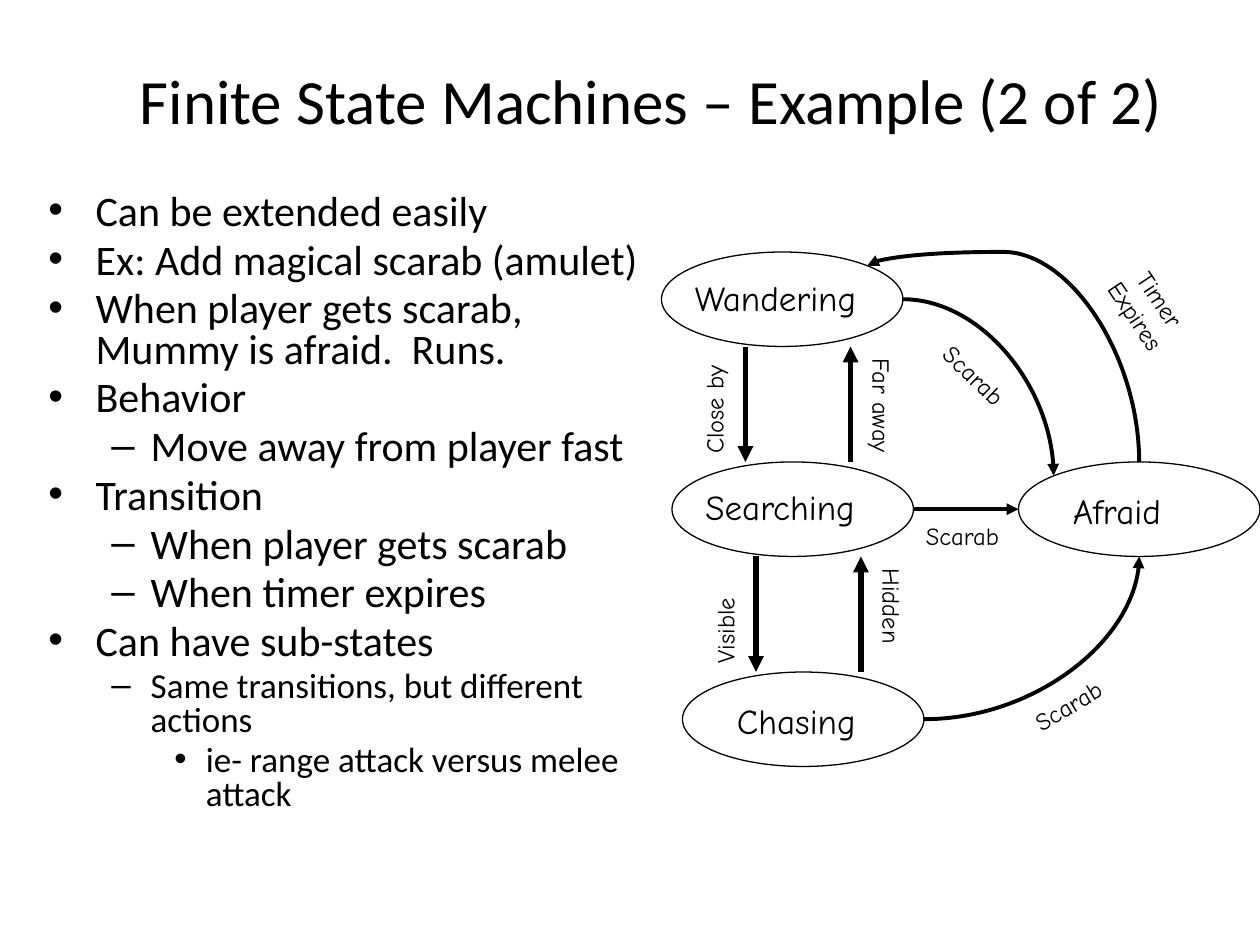
import pptx
import pptx.util
import pptx.dml.color
import pptx.enum.shapes
import pptx.enum.text
import pptx.oxml
import pptx.oxml.ns

BLACK = "000000"
CELL = pptx.util.Inches(1 / 12)  # grid: 120 columns by 90 rows


def style_text(paragraph, wording, size, font, color=BLACK):
    run = paragraph.add_run()
    run.text = wording
    run.font.size = pptx.util.Pt(size)
    run.font.name = font
    run.font.color.rgb = pptx.dml.color.RGBColor.from_string(color)


def add_label(shapes, box, lines, size, turn=0, align=None):
    label = shapes.add_textbox(*(int(CELL * n) for n in box))
    label.rotation = turn
    label.text_frame.word_wrap = False
    label.text_frame.auto_size = pptx.enum.text.MSO_AUTO_SIZE.SHAPE_TO_FIT_TEXT
    for i, line in enumerate(lines):
        paragraph = label.text_frame.paragraphs[0] if i == 0 else label.text_frame.add_paragraph()
        paragraph.alignment = align
        style_text(paragraph, line, size, "Comic Neue")


deck = pptx.Presentation()
deck.slide_width, deck.slide_height = 120 * CELL, 90 * CELL
slide = deck.slides.add_slide(deck.slide_layouts[1])
CENTER = pptx.enum.text.PP_ALIGN.CENTER

# Title
title = slide.shapes.title
title.left, title.top, title.width, title.height = (int(CELL * n) for n in (9, 2, 106, 15))
title.text_frame.vertical_anchor = pptx.enum.text.MSO_ANCHOR.MIDDLE
title.text_frame.paragraphs[0].alignment = CENTER
style_text(title.text_frame.paragraphs[0], "Finite State Machines – Example (2 of 2)", 36, "Calibri")

# Bullet list: level, size, wording
points = [
    (0, 24, "Can be extended easily"),
    (0, 24, "Ex: Add magical scarab (amulet)"),
    (0, 24, "When player gets scarab, Mummy is afraid.  Runs."),
    (0, 24, "Behavior"),
    (1, 24, "Move away from player fast"),
    (0, 24, "Transition"),
    (1, 24, "When player gets scarab"),
    (1, 24, "When timer expires"),
    (0, 24, "Can have sub-states"),
    (1, 20, "Same transitions, but different actions"),
    (2, 20, "ie- range attack versus melee attack"),
]
body = slide.placeholders[1]
body.left, body.top, body.width, body.height = (int(CELL * n) for n in (3.4, 17.9, 60, 66))
body.text_frame.auto_size = pptx.enum.text.MSO_AUTO_SIZE.NONE
for i, (level, size, wording) in enumerate(points):
    paragraph = body.text_frame.paragraphs[0] if i == 0 else body.text_frame.add_paragraph()
    paragraph.level = level
    paragraph.line_spacing = 0.8
    style_text(paragraph, wording, size, "Calibri")

# States: column and row of the ellipse, name, box of the name
states = [
    (63, 24, "Wandering", (65, 25.7, 19.2, 5.2)),
    (64, 44, "Searching", (66, 45.6, 18, 5.2)),
    (65, 64, "Chasing", (69, 66, 14.2, 5.2)),
    (97, 44, "Afraid", (101, 46, 12.7, 5.2)),
]
for column, row, name, name_box in states:
    state = slide.shapes.add_group_shape()
    oval = state.shapes.add_shape(
        pptx.enum.shapes.MSO_SHAPE.OVAL, column * CELL, row * CELL, 23 * CELL, 9 * CELL)
    oval.shadow.inherit = False
    oval.fill.background()
    oval.line.color.rgb = pptx.dml.color.RGBColor.from_string(BLACK)
    oval.line.width = pptx.util.Pt(0.75)
    add_label(state.shapes, name_box, [name], 20)

# Transitions: start, end, width, preset curve (None when straight)
transitions = [
    ((71, 33), (71, 44), 3, None),
    ((72, 53), (72, 64), 3, None),
    ((81, 44), (81, 33), 3, None),
    ((82, 64), (82, 53), 3, None),
    ((87, 48.5), (97, 48.5), 2.25, None),
    ((86, 28.5), (100.35, 45.3), 2.25, "curvedConnector2"),
    ((88, 68.5), (108.5, 53), 2.25, "curvedConnector2"),
    ((86.2, 21.7), (104.9, 47.6), 2.25, "curvedConnector3"),  # turned below
]
for start, end, width, curve in transitions:
    kind = pptx.enum.shapes.MSO_CONNECTOR.CURVE if curve else pptx.enum.shapes.MSO_CONNECTOR.STRAIGHT
    arrow = slide.shapes.add_connector(kind, *(int(CELL * n) for n in start + end))
    arrow.line.color.rgb = pptx.dml.color.RGBColor.from_string(BLACK)
    arrow.line.width = pptx.util.Pt(width)
    properties = arrow._element.spPr
    tip = pptx.oxml.parse_xml('<a:tailEnd %s type="triangle"/>' % pptx.oxml.ns.nsdecls("a"))
    properties.find(pptx.oxml.ns.qn("a:ln")).append(tip)
    properties.append(pptx.oxml.parse_xml("<a:effectLst %s/>" % pptx.oxml.ns.nsdecls("a")))
    if curve:
        properties.find(pptx.oxml.ns.qn("a:prstGeom")).set("prst", curve)

# The timer curve leaves Afraid upwards and bends past the top of Wandering
frame = properties.find(pptx.oxml.ns.qn("a:xfrm"))
frame.set("rot", "5400000")
frame.set("flipH", "1")
arrow_shape = properties.find(pptx.oxml.ns.qn("a:prstGeom"))
for old in list(arrow_shape):
    arrow_shape.remove(old)
arrow_shape.append(pptx.oxml.parse_xml(
    '<a:avLst %s><a:gd name="adj1" fmla="val 107000"/></a:avLst>' % pptx.oxml.ns.nsdecls("a")))

# Transition labels: box, lines, turn, alignment
captions = [
    ((62.3, 36.7, 11.4, 4), ["Close by"], 270, None),
    ((64.2, 57.5, 9.7, 4), ["Visible"], 270, None),
    ((78, 37, 12, 4), ["Far away"], 90, None),
    ((79.9, 56, 10.1, 4), ["Hidden"], 90, None),
    ((87, 49, 10.1, 4), ["Scarab"], 0, None),
    ((88, 34, 10.1, 4), ["Scarab"], 43.7, None),
    ((97, 65, 10.1, 4), ["Scarab"], 328.5, None),
    ((104, 25.9, 10.7, 6.8), ["Timer", "Expires"], 56.3, CENTER),
]
for box, lines, turn, align in captions:
    add_label(slide.shapes, box, lines, 14, turn, align)

deck.save("out.pptx")
